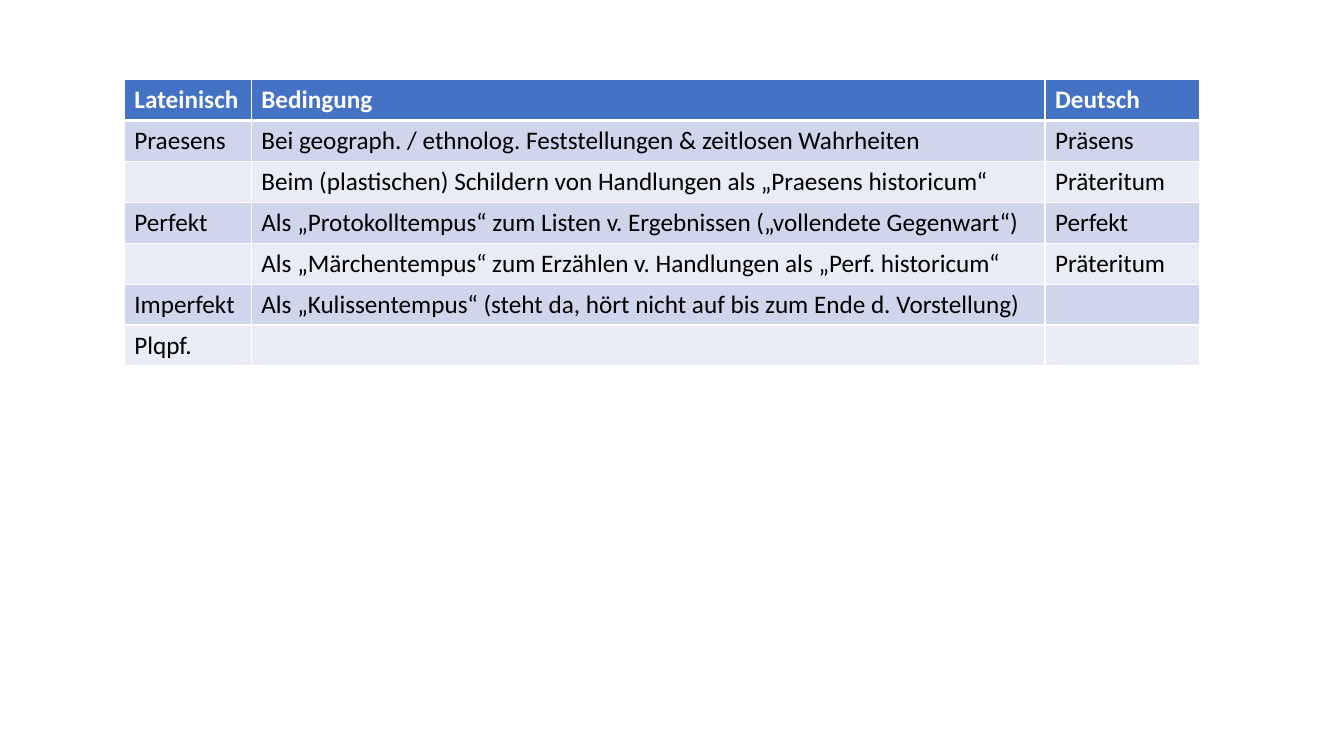
from lxml import etree
from pptx import Presentation
from pptx.dml.color import RGBColor
from pptx.enum.text import MSO_ANCHOR
from pptx.oxml.ns import qn
from pptx.util import Inches, Pt

TOP = MSO_ANCHOR.TOP
WHITE = RGBColor(0xFF, 0xFF, 0xFF)
BLACK = RGBColor(0x00, 0x00, 0x00)
BLUE = RGBColor(0x44, 0x72, 0xC4)
BANDS = (RGBColor(0xE9, 0xEB, 0xF5), RGBColor(0xCF, 0xD5, 0xEA))

TENSES = [
    ("Lateinisch", "Bedingung", "Deutsch"),
    ("Praesens", "Bei geograph. / ethnolog. Feststellungen & zeitlosen Wahrheiten", "Präsens"),
    ("", "Beim (plastischen) Schildern von Handlungen als „Praesens historicum“", "Präteritum"),
    ("Perfekt", "Als „Protokolltempus“ zum Listen v. Ergebnissen („vollendete Gegenwart“)", "Perfekt"),
    ("", "Als „Märchentempus“ zum Erzählen v. Handlungen als „Perf. historicum“", "Präteritum"),
    ("Imperfekt", "Als „Kulissentempus“ (steht da, hört nicht auf bis zum Ende d. Vorstellung)", ""),
    ("Plqpf.", "", ""),
]


class Sheet:
    """Draws styled elements on one slide, with lengths in percent of its size."""

    def __init__(self, deck, font="Calibri", size=18):
        self.slide = deck.slides.add_slide(deck.slide_layouts[6])
        self.wide, self.high = deck.slide_width, deck.slide_height
        self.font, self.size = font, Pt(size)

    def across(self, share):
        return round(self.wide * share / 100)

    def down(self, share):
        return round(self.high * share / 100)

    def edge(self, cell, side, width):
        line = etree.SubElement(cell._tc.get_or_add_tcPr(), qn(f"a:ln{side}"), w=str(Pt(width)))
        fill = etree.SubElement(line, qn("a:solidFill"))
        etree.SubElement(fill, qn("a:srgbClr"), val=str(WHITE))

    def cell(self, cell, text, row):
        head = row == 0
        for side in "LRTB":
            thick = (row, side) in ((0, "B"), (1, "T"))
            self.edge(cell, side, 3 if thick else 1)
        cell.fill.solid()
        cell.fill.fore_color.rgb = BLUE if head else BANDS[row % 2]
        cell.vertical_anchor = TOP
        cell.text = text
        font = cell.text_frame.paragraphs[0].font
        font.name, font.size, font.bold = self.font, self.size, head
        font.color.rgb = WHITE if head else BLACK

    def table(self, left, top, widths, height, data):
        frame = self.slide.shapes.add_table(
            len(data), len(widths), self.across(left), self.down(top),
            self.across(sum(widths)), self.down(height * len(data)))
        table = frame.table
        for column, width in zip(table.columns, widths):
            column.width = self.across(width)
        for row, texts in enumerate(data):
            table.rows[row].height = self.down(height)
            for col, text in enumerate(texts):
                self.cell(table.cell(row, col), text, row)


def main():
    deck = Presentation()
    deck.slide_width, deck.slide_height = Inches(13.33), Inches(7.5)
    sheet = Sheet(deck)
    sheet.table(9.25, 10.55, (9.45, 59.05, 11.5), 5.41, TENSES)
    deck.save("out.pptx")


if __name__ == "__main__":
    main()
